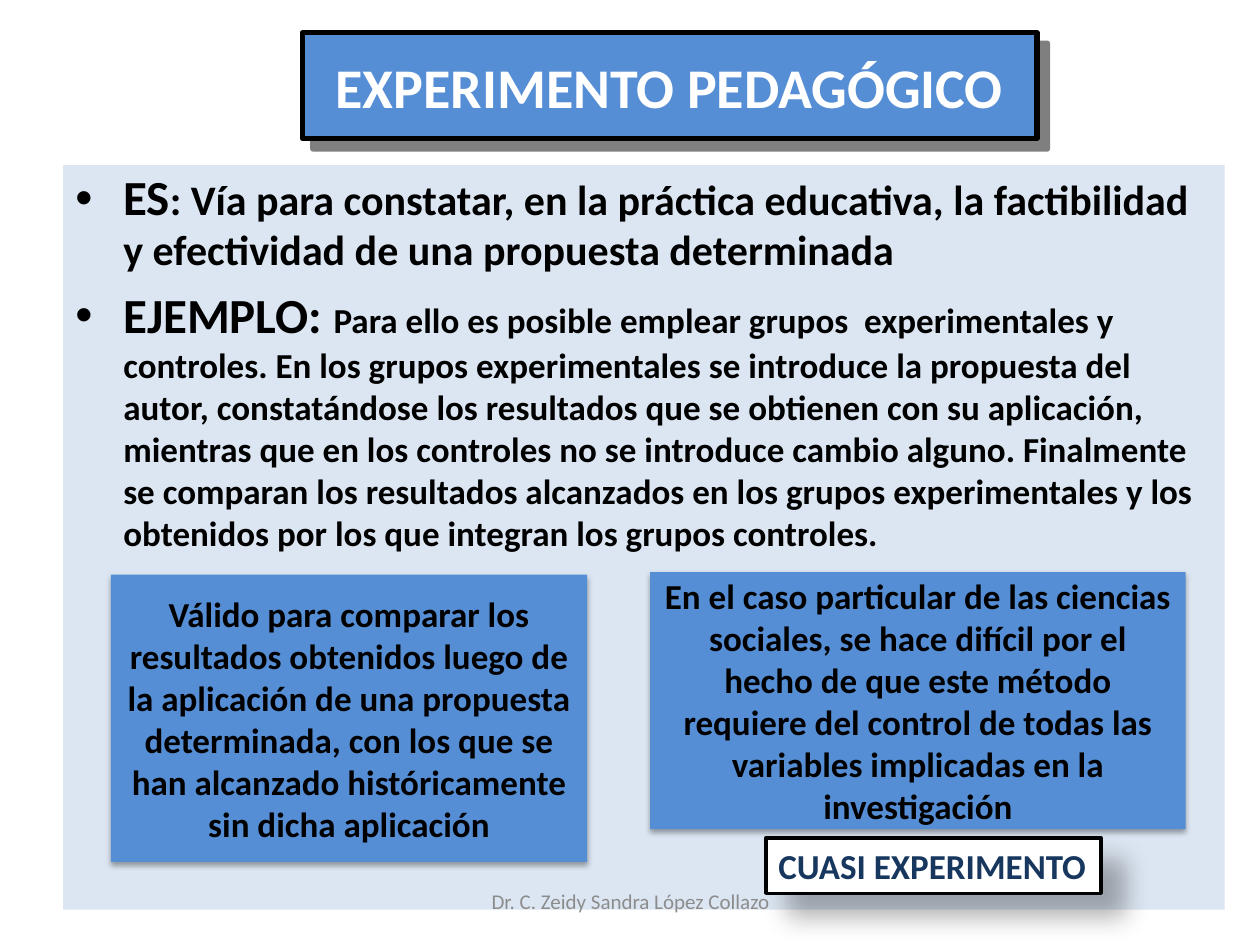
from dataclasses import dataclass
from typing import Optional

from lxml.etree import SubElement
from pptx import Presentation
from pptx.dml.color import RGBColor
from pptx.enum.shapes import MSO_SHAPE
from pptx.enum.text import MSO_ANCHOR, PP_ALIGN
from pptx.oxml.ns import qn
from pptx.util import Inches, Pt


@dataclass(frozen=True)
class Theme:
    font: str = "Calibri"
    blue: str = "558ED5"
    pale: str = "DCE6F2"
    navy: str = "17375E"
    white: str = "FFFFFF"
    black: str = "000000"
    grey: str = "8C8C8C"
    title: int = 32
    lead: int = 28
    definition: int = 24
    body: int = 20
    footer: int = 12


THEME = Theme()


@dataclass(frozen=True)
class Span:
    text: str
    size: int = THEME.body
    color: str = THEME.black
    bold: bool = True


@dataclass(frozen=True)
class Para:
    spans: tuple[Span, ...]
    bullet: bool = False
    line_spacing: Optional[float] = None


@dataclass(frozen=True)
class Shadow:
    alpha: int
    blur: float
    distance: float
    angle: int


@dataclass(frozen=True)
class Box:
    left: float
    top: float
    width: float
    height: float
    paras: tuple[Para, ...]
    fill: Optional[str] = None
    line: float = 0
    shadow: Optional[Shadow] = None
    align: PP_ALIGN = PP_ALIGN.CENTER
    anchor: MSO_ANCHOR = MSO_ANCHOR.MIDDLE
    wrap: bool = True


SOFT = Shadow(35, 3.1, 1.8, 90)

BOXES = (
    Box(2.4, 0.26, 5.83, 0.84,
        (Para((Span("EXPERIMENTO PEDAGÓGICO", THEME.title, THEME.white),)),),
        THEME.blue, 3, Shadow(50, 0, 8.5, 45)),
    Box(0.5, 1.31, 9.22, 5.91,
        (Para((Span("ES", THEME.lead),
               Span(": Vía para constatar, en la práctica educativa, la factibilidad "
                    "y efectividad de una propuesta determinada", THEME.definition)),
              True, 0.95),
         Para((Span("EJEMPLO: ", THEME.lead),
               Span("Para ello es posible emplear grupos  experimentales y controles. "
                    "En los grupos experimentales se introduce la propuesta del autor, "
                    "constatándose los resultados que se obtienen con su aplicación, "
                    "mientras que en los controles no se introduce cambio alguno. "
                    "Finalmente se comparan los resultados alcanzados en los grupos "
                    "experimentales y los obtenidos por los que integran los grupos "
                    "controles.")),
              True)),
        THEME.pale, align=PP_ALIGN.LEFT, anchor=MSO_ANCHOR.TOP),
    Box(0.88, 4.56, 3.78, 2.28,
        (Para((Span("Válido para comparar los resultados obtenidos luego de la "
                    "aplicación de una propuesta determinada, con los que se han "
                    "alcanzado históricamente sin dicha aplicación"),)),),
        THEME.blue, shadow=SOFT),
    Box(5.16, 4.54, 4.25, 2.04,
        (Para((Span("En el caso particular de las ciencias sociales, se hace difícil "
                    "por el hecho de que este método requiere del control de todas las "
                    "variables implicadas en la investigación"),)),),
        THEME.blue, shadow=SOFT),
    Box(6.08, 6.65, 2.66, 0.44,
        (Para((Span("CUASI EXPERIMENTO", color=THEME.navy),)),),
        THEME.white, 2, Shadow(30, 15, 18, 45), PP_ALIGN.LEFT, MSO_ANCHOR.TOP, False),
    Box(3.42, 6.95, 3.17, 0.4,
        (Para((Span("Dr. C. Zeidy Sandra López Collazo", THEME.footer, THEME.grey,
                    False),)),)),
)


def add_shadow(shape, shadow: Shadow) -> None:
    effects = shape._element.spPr.find(qn("a:effectLst"))
    outer = SubElement(effects, qn("a:outerShdw"), blurRad=str(Pt(shadow.blur)),
                       dist=str(Pt(shadow.distance)), dir=str(shadow.angle * 60000),
                       algn="ctr", rotWithShape="0")
    color = SubElement(outer, qn("a:srgbClr"), val=THEME.black)
    SubElement(color, qn("a:alpha"), val=str(shadow.alpha * 1000))


def add_bullet(paragraph) -> None:
    paragraph.space_before = Pt(5.6)
    properties = paragraph._p.get_or_add_pPr()
    indent = Inches(0.38)
    properties.set("marL", str(indent))
    properties.set("indent", str(-indent))
    SubElement(properties, qn("a:buFont"), typeface="Arial")
    SubElement(properties, qn("a:buChar"), char="•")


def add_para(paragraph, para: Para, align: PP_ALIGN) -> None:
    paragraph.alignment = align
    if para.line_spacing:
        paragraph.line_spacing = para.line_spacing
    if para.bullet:
        add_bullet(paragraph)
    for span in para.spans:
        run = paragraph.add_run()
        run.text = span.text
        run.font.name = THEME.font
        run.font.size = Pt(span.size)
        run.font.bold = span.bold
        run.font.color.rgb = RGBColor.from_string(span.color)


def add_box(page, box: Box) -> None:
    place = [Inches(n) for n in (box.left, box.top, box.width, box.height)]
    if box.fill:
        shape = page.shapes.add_shape(MSO_SHAPE.RECTANGLE, *place)
        shape.shadow.inherit = False
        shape.fill.solid()
        shape.fill.fore_color.rgb = RGBColor.from_string(box.fill)
        if box.line:
            shape.line.color.rgb = RGBColor.from_string(THEME.black)
            shape.line.width = Pt(box.line)
        else:
            shape.line.fill.background()
    else:
        shape = page.shapes.add_textbox(*place)
    if box.shadow:
        add_shadow(shape, box.shadow)
    frame = shape.text_frame
    frame.word_wrap = box.wrap
    frame.vertical_anchor = box.anchor
    for index, para in enumerate(box.paras):
        paragraph = frame.add_paragraph() if index else frame.paragraphs[0]
        add_para(paragraph, para, box.align)


def main() -> None:
    deck = Presentation()
    deck.slide_width = Inches(10)
    deck.slide_height = Inches(7.5)
    page = deck.slides.add_slide(deck.slide_layouts[6])
    for box in BOXES:
        add_box(page, box)
    deck.save("out.pptx")


if __name__ == "__main__":
    main()
